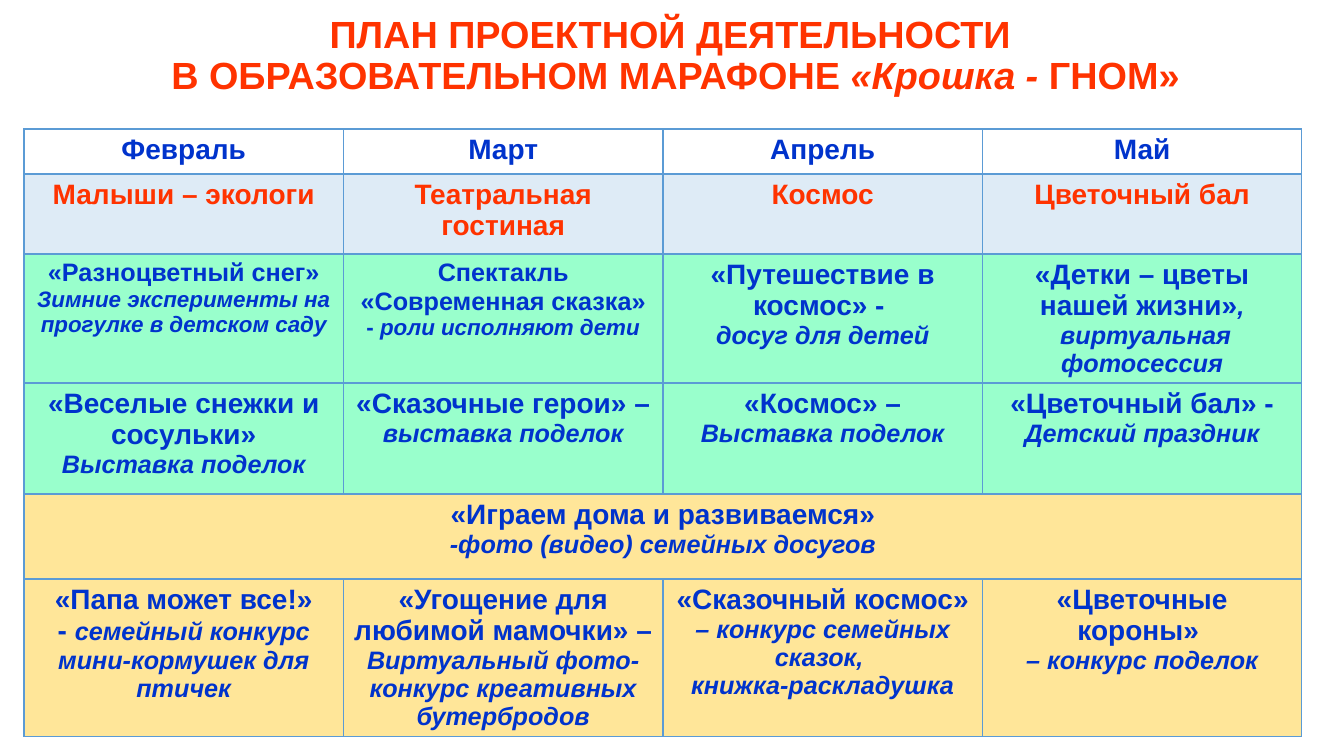
import pptx
import pptx.dml.color
import pptx.enum.text
import pptx.oxml
import pptx.oxml.ns
import pptx.util

PX = 914400 / 100.8
COLORS = {"red": "FF3300", "blue": "0033CC", "line": "5B9BD5",
          "mint": "99FFCC", "sand": "FFE699"}
CENTER = pptx.enum.text.PP_ALIGN.CENTER


def px(length):
    return pptx.util.Emu(round(length * PX))


def add_run(paragraph, text, size, color, italic=False):
    run = paragraph.add_run()
    run.text = text
    font_format = {"name": "Arial", "size": pptx.util.Pt(size), "bold": True, "italic": italic}
    for name, value in font_format.items():
        setattr(run.font, name, value)
    run.font.color.rgb = pptx.dml.color.RGBColor.from_string(COLORS[color])


presentation = pptx.Presentation()
presentation.slide_width, presentation.slide_height = px(1344), px(756)
slide = presentation.slides.add_slide(presentation.slide_layouts[5])

# Title
title = slide.shapes.title
title_box = {"left": 96, "top": 7, "width": 1159, "height": 99}
for name, value in title_box.items():
    setattr(title, name, px(value))
title_frame_format = {"word_wrap": True,
                      "auto_size": pptx.enum.text.MSO_AUTO_SIZE.NONE,
                      "vertical_anchor": pptx.enum.text.MSO_ANCHOR.MIDDLE}
for name, value in title_frame_format.items():
    setattr(title.text_frame, name, value)
paragraph = title.text_frame.paragraphs[0]
paragraph.alignment = CENTER
paragraph.line_spacing = 0.9
add_run(paragraph, "ПЛАН ПРОЕКТНОЙ ДЕЯТЕЛЬНОСТИ ", 27, "red")
paragraph.add_line_break()
add_run(paragraph, "В ОБРАЗОВАТЕЛЬНОМ МАРАФОНЕ ", 27, "red")
add_run(paragraph, "«Крошка -", 27, "red", True)
add_run(paragraph, " ГНОМ»", 27, "red")

# Each row: height, fill, text colour, cells; a cell is a list of paragraphs,
# a paragraph is a list of runs (text, size, italic)
months = ["Февраль", "Март", "Апрель", "Май"]
themes = ["Малыши – экологи", "Театральная гостиная", "Космос", "Цветочный бал"]
plan_rows = [
    (45, None, "blue", [[[(month, 20, False)]] for month in months]),
    (80, "line", "red", [[[(theme, 20, False)]] for theme in themes]),
    (111, "mint", "blue", [
        [[("«Разноцветный снег»", 18, False)],
         [("Зимние эксперименты на прогулке в детском саду", 16, True)]],
        [[("Спектакль «Современная сказка» ", 18, False), ("- ", 16, False),
          ("роли исполняют дети", 16, True)]],
        [[("«Путешествие в космос» - ", 20, False)], [("досуг для детей", 18, True)]],
        [[("«Детки – цветы нашей жизни»", 20, False), (",", 18, True)],
         [(" виртуальная фотосессия", 18, True)]],
    ]),
    (111, "mint", "blue", [
        [[("«Веселые снежки и сосульки»", 20, False)], [("Выставка поделок", 18, True)]],
        [[("«Сказочные герои» – ", 20, False), ("выставка поделок", 18, True)]],
        [[("«Космос» –", 20, False)], [("Выставка поделок", 18, True)]],
        [[("«Цветочный бал» -", 20, False)], [("Детский праздник", 18, True)]],
    ]),
    (85, "sand", "blue", [
        [[("«Играем дома и развиваемся»", 20, False)],
         [("-фото (видео) семейных досугов", 18, True)]],
    ]),
    (111, "sand", "blue", [
        [[("«Папа может все!»", 20, False)],
         [("- ", 20, False), ("семейный конкурс мини-кормушек для птичек", 18, True)]],
        [[("«Угощение для любимой мамочки» –", 20, False)],
         [("Виртуальный фото-конкурс креативных бутербродов", 18, True)]],
        [[("«Сказочный космос» ", 20, False), ("– конкурс семейных сказок, ", 18, True)],
         [("книжка-раскладушка", 18, True)]],
        [[("«Цветочные короны» ", 20, False)], [("– конкурс поделок", 18, True)]],
    ]),
]

# Table
total_height = sum(plan_row[0] for plan_row in plan_rows)
table = slide.shapes.add_table(len(plan_rows), len(months), px(24), px(129),
                               px(1278), px(total_height)).table
table.first_row = False
table.horz_banding = False

for row_index, (height, fill, color, cells) in enumerate(plan_rows):
    table.rows[row_index].height = px(height)
    if len(cells) == 1:
        table.cell(row_index, 0).merge(table.cell(row_index, len(months) - 1))
    for column_index, paragraphs in enumerate(cells):
        text_frame = table.cell(row_index, column_index).text_frame
        for paragraph_index, runs in enumerate(paragraphs):
            paragraph = text_frame.add_paragraph() if paragraph_index else text_frame.paragraphs[0]
            paragraph.alignment = CENTER
            for text, size, italic in runs:
                add_run(paragraph, text, size, color, italic)

    for column_index in range(len(months)):
        cell = table.cell(row_index, column_index)
        properties = cell._tc.get_or_add_tcPr()
        if fill is None:
            cell.fill.background()
        else:
            cell.fill.solid()
            cell.fill.fore_color.rgb = pptx.dml.color.RGBColor.from_string(COLORS[fill])
        if fill == "line":
            fill_color = properties.find(".//" + pptx.oxml.ns.qn("a:srgbClr"))
            fill_color.append(pptx.oxml.parse_xml(
                f'<a:alpha {pptx.oxml.ns.nsdecls("a")} val="20000"/>'))
        widths = {"lnL": 1, "lnR": 1, "lnT": 2 if row_index == 1 else 1,
                  "lnB": 2 if row_index == 0 else 1}
        for position, (side, width) in enumerate(widths.items()):
            properties.insert(position, pptx.oxml.parse_xml(
                f'<a:{side} {pptx.oxml.ns.nsdecls("a")} w="{pptx.util.Pt(width)}">'
                f'<a:solidFill><a:srgbClr val="{COLORS["line"]}"/></a:solidFill></a:{side}>'))

presentation.save("out.pptx")
